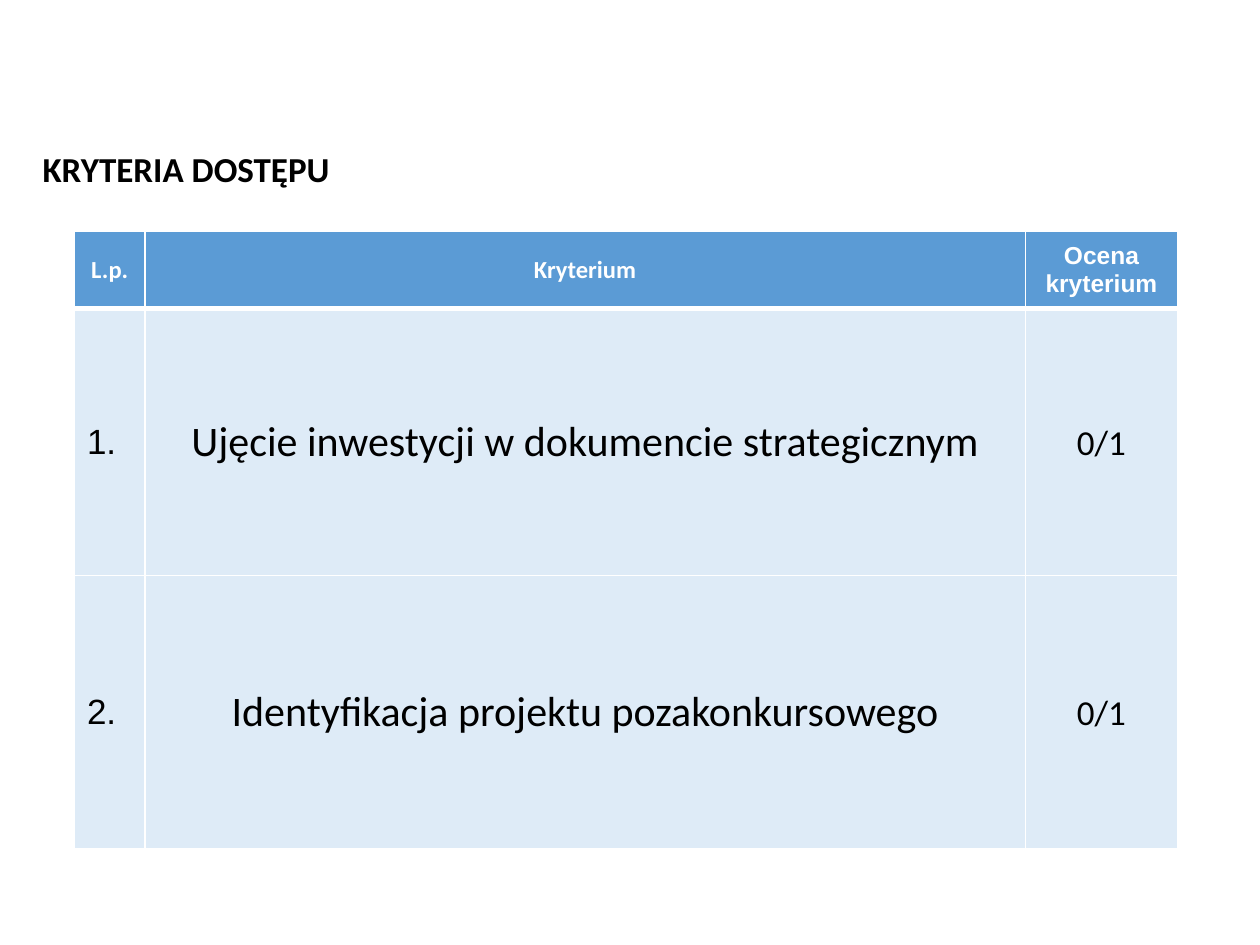
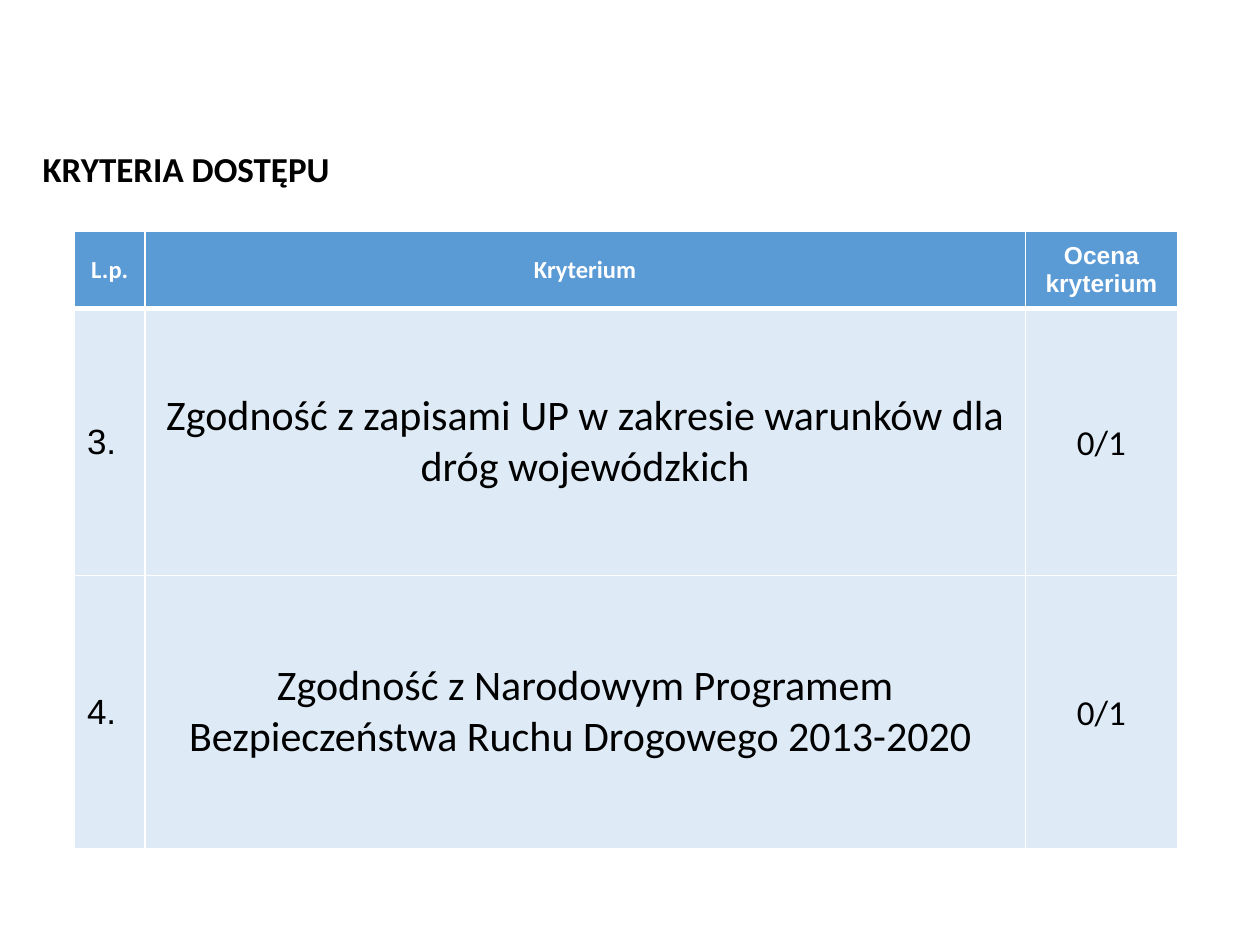
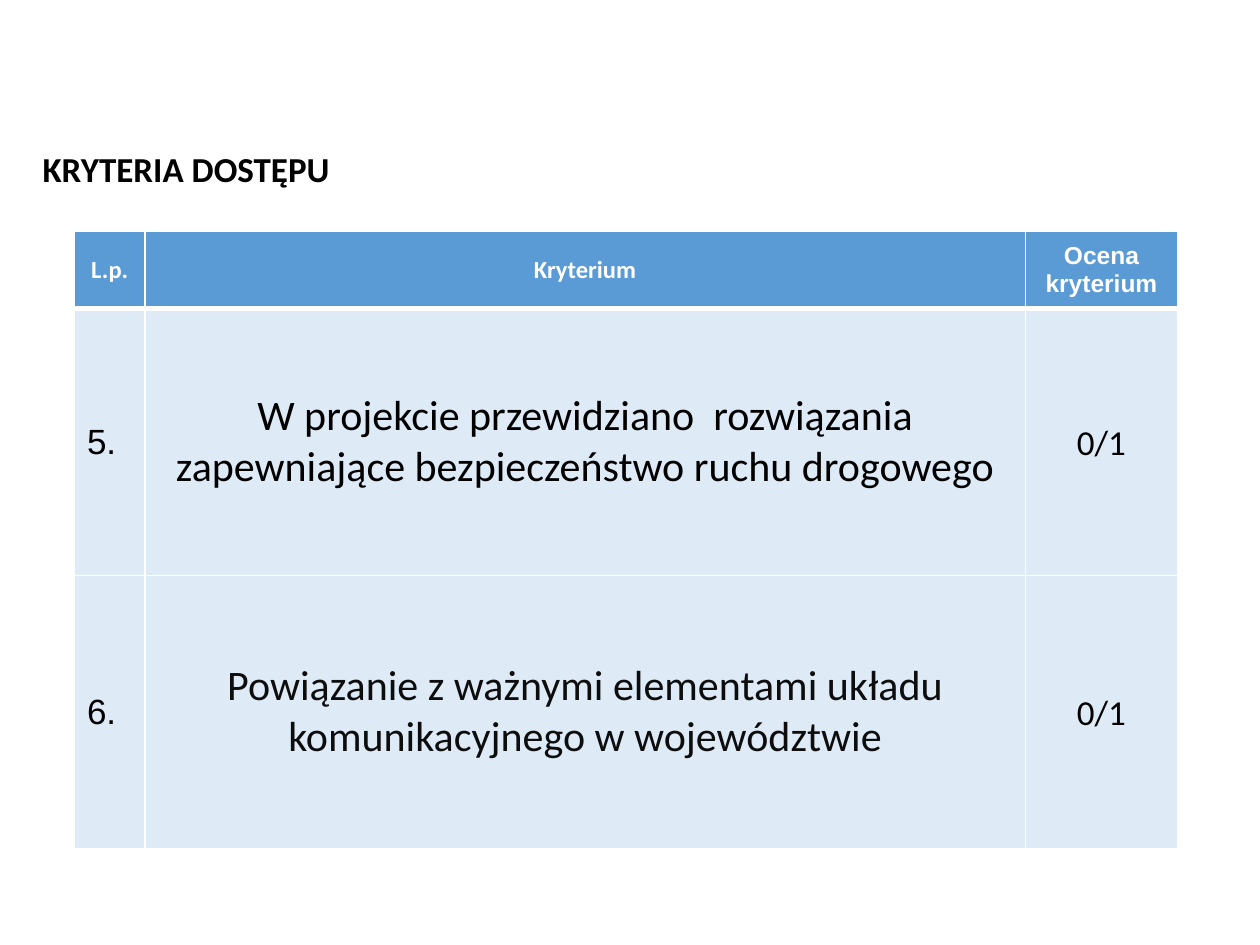
import dataclasses

import pptx
import pptx.dml.color
import pptx.enum.text
import pptx.oxml
import pptx.oxml.ns
import pptx.util
from pptx.util import Cm

ALIGN = pptx.enum.text.PP_ALIGN
MIDDLE = pptx.enum.text.MSO_ANCHOR.MIDDLE


@dataclasses.dataclass(frozen=True)
class Theme:
    header_fill: str = "5B9BD5"
    body_fill: str = "DEEBF7"
    white: str = "FFFFFF"
    black: str = "000000"
    soft_black: str = "0D0D0D"
    main_font: str = "Calibri"
    second_font: str = "Arial"
    title_size: int = 20
    header_size: int = 14
    criterion_size: int = 24
    detail_size: int = 20
    thin_line: int = 1
    thick_line: int = 3


THEME = Theme()

TITLE = "KRYTERIA DOSTĘPU"
HEADERS = [
    ("L.p.", THEME.main_font),
    ("Kryterium", THEME.main_font),
    ("Ocena kryterium", THEME.second_font),
]
SCORE = "0/1"
COLUMN_WIDTHS = [Cm(1.42), Cm(17.75), Cm(3.07)]
ROW_HEIGHTS = [Cm(1.55), Cm(5.38), Cm(5.51)]

# Two criteria on each slide: wording and text colour
SLIDES = [
    [
        ("Ujęcie inwestycji w dokumencie strategicznym", THEME.black),
        ("Identyfikacja projektu pozakonkursowego", THEME.black),
    ],
    [
        ("Zgodność z zapisami UP w zakresie warunków dla dróg wojewódzkich", THEME.black),
        ("Zgodność z Narodowym Programem Bezpieczeństwa Ruchu Drogowego 2013-2020 ", THEME.black),
    ],
    [
        ("W projekcie przewidziano  rozwiązania zapewniające bezpieczeństwo ruchu drogowego", THEME.black),
        ("Powiązanie z ważnymi elementami układu komunikacyjnego w województwie", THEME.soft_black),
    ],
]


def rgb(colour):
    return pptx.dml.color.RGBColor.from_string(colour)


def write(frame, text, size, font=THEME.main_font, colour=THEME.black,
          bold=False, align=ALIGN.CENTER):
    """Put one formatted paragraph into a text frame and return it."""
    para = frame.paragraphs[0]
    para.add_run().text = text
    para.alignment = align
    para.font.size = pptx.util.Pt(size)
    para.font.name = font
    para.font.bold = bold
    para.font.color.rgb = rgb(colour)
    return para


def set_borders(cell, top, bottom):
    """Draw white lines on all four sides; widths in points."""
    widths = {"lnL": THEME.thin_line, "lnR": THEME.thin_line, "lnT": top, "lnB": bottom}
    properties = cell._tc.get_or_add_tcPr()
    for position, (side, width) in enumerate(widths.items()):
        line = pptx.oxml.parse_xml(
            f'<a:{side} {pptx.oxml.ns.nsdecls("a")} w="{pptx.util.Pt(width)}">'
            f'<a:solidFill><a:srgbClr val="{THEME.white}"/></a:solidFill></a:{side}>'
        )
        properties.insert(position, line)


def style_cell(cell, row_index):
    cell.vertical_anchor = MIDDLE
    cell.fill.solid()
    cell.fill.fore_color.rgb = rgb(THEME.body_fill if row_index else THEME.header_fill)
    set_borders(
        cell,
        top=THEME.thick_line if row_index == 1 else THEME.thin_line,
        bottom=THEME.thick_line if row_index == 0 else THEME.thin_line,
    )


def add_title(page):
    box = page.shapes.add_textbox(Cm(0.61), Cm(2.84), Cm(9.4), Cm(1.12))
    frame = box.text_frame
    frame.word_wrap = True
    frame.auto_size = pptx.enum.text.MSO_AUTO_SIZE.SHAPE_TO_FIT_TEXT
    frame.vertical_anchor = MIDDLE
    write(frame, TITLE, THEME.title_size, bold=True, align=ALIGN.LEFT)


def fill_criterion(cells, number, criterion, colour):
    number_cell, criterion_cell, score_cell = cells
    write(number_cell.text_frame, f"{number}.", THEME.detail_size,
          font=THEME.second_font, align=ALIGN.LEFT)
    write(criterion_cell.text_frame, criterion, THEME.criterion_size, colour=colour)
    score_cell.margin_left = score_cell.margin_right = Cm(0.1)
    score_cell.margin_top = score_cell.margin_bottom = Cm(0.1)
    write(score_cell.text_frame, SCORE, THEME.detail_size).line_spacing = 1.07


def add_criteria_table(page, criteria, first_number):
    table = page.shapes.add_table(
        len(ROW_HEIGHTS), len(COLUMN_WIDTHS), Cm(1.5), Cm(4.67),
        sum(COLUMN_WIDTHS), sum(ROW_HEIGHTS),
    ).table
    table.first_row = table.horz_banding = False
    for column, width in zip(table.columns, COLUMN_WIDTHS):
        column.width = width
    for row_index, (row, height) in enumerate(zip(table.rows, ROW_HEIGHTS)):
        row.height = height
        for cell in row.cells:
            style_cell(cell, row_index)

    # Header row
    for cell, (text, font) in zip(table.rows[0].cells, HEADERS):
        write(cell.text_frame, text, THEME.header_size, font, THEME.white, bold=True)

    # Criteria rows
    for offset, (criterion, colour) in enumerate(criteria):
        fill_criterion(table.rows[offset + 1].cells, first_number + offset, criterion, colour)


def main():
    deck = pptx.Presentation()
    deck.slide_width, deck.slide_height = Cm(25.4), Cm(19.05)
    next_number = 1
    for criteria in SLIDES:
        page = deck.slides.add_slide(deck.slide_layouts[6])
        add_criteria_table(page, criteria, next_number)
        add_title(page)
        next_number += len(criteria)
    deck.save("out.pptx")


if __name__ == "__main__":
    main()
